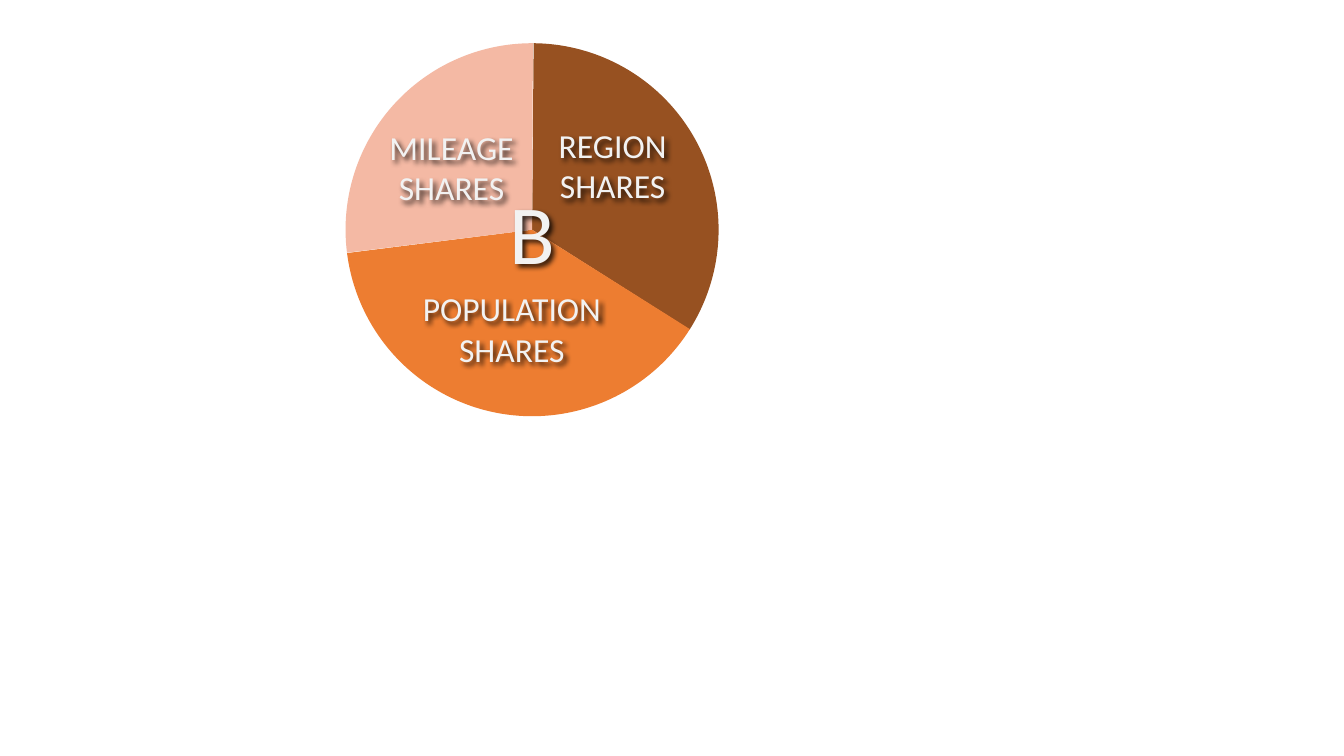
from lxml.etree import SubElement
from pptx import Presentation
from pptx.dml.color import RGBColor
from pptx.enum.shapes import MSO_SHAPE
from pptx.enum.text import MSO_AUTO_SIZE, PP_ALIGN
from pptx.oxml.ns import qn
from pptx.util import Cm, Pt

BROWN = RGBColor(0x97, 0x51, 0x21)
ORANGE = RGBColor(0xED, 0x7D, 0x31)
PINK = RGBColor(0xF4, 0xB9, 0xA4)
PALE = RGBColor(0xF2, 0xF2, 0xF2)
FONT = "Calibri"
ADJUSTMENT_PER_DEGREE = 0.6

SLICES = [
    (270.48, 32.35, BROWN),
    (32.22, 172.8, ORANGE),
    (172.93, 270.27, PINK),
]
LABELS = [
    ("MILEAGE SHARES", 0.64, 1.98, 4.06, 2.31, 24, True),
    ("REGION SHARES", 4.7, 1.93, 4.06, 2.31, 24, True),
    ("POPULATION SHARES", 1.65, 6.05, 5.08, 2.31, 24, True),
    ("B", 3.86, 3.33, 1.68, 2.82, 60, False),
]


def add_shadow(box):
    effects = SubElement(box.element.spPr, qn("a:effectLst"))
    shadow = SubElement(effects, qn("a:outerShdw"), blurRad="50800",
                        dist="38100", dir="2700000", algn="tl")
    color = SubElement(shadow, qn("a:srgbClr"), val="000000")
    SubElement(color, qn("a:alpha"), val="80000")


def add_slice(page, left, top, size, start, end, color):
    piece = page.shapes.add_shape(MSO_SHAPE.PIE, left, top, size, size)
    piece.adjustments[0] = start * ADJUSTMENT_PER_DEGREE
    piece.adjustments[1] = end * ADJUSTMENT_PER_DEGREE
    piece.shadow.inherit = False
    piece.fill.solid()
    piece.fill.fore_color.rgb = color
    piece.line.fill.background()


def add_label(page, left, top, width, height, text, size, wrap):
    box = page.shapes.add_textbox(left, top, width, height)
    frame = box.text_frame
    frame.word_wrap = wrap
    frame.auto_size = MSO_AUTO_SIZE.SHAPE_TO_FIT_TEXT
    frame.text = text
    para = frame.paragraphs[0]
    para.alignment = PP_ALIGN.CENTER
    span = para.runs[0]
    span.font.size = Pt(size)
    span.font.name = FONT
    span.font.color.rgb = PALE
    add_shadow(box)


def add_share_pie(page, left, top, size):
    for start, end, color in SLICES:
        add_slice(page, left, top, size, start, end, color)
    for text, across, down, width, height, points, wrap in LABELS:
        add_label(page, left + Cm(across), top + Cm(down),
                  Cm(width), Cm(height), text, points, wrap)


def main():
    deck = Presentation()
    deck.slide_width = Cm(33.87)
    deck.slide_height = Cm(19.05)
    page = deck.slides.add_slide(deck.slide_layouts[6])
    add_share_pie(page, Cm(8.71), Cm(1.09), Cm(9.4))
    deck.save("out.pptx")


if __name__ == "__main__":
    main()
